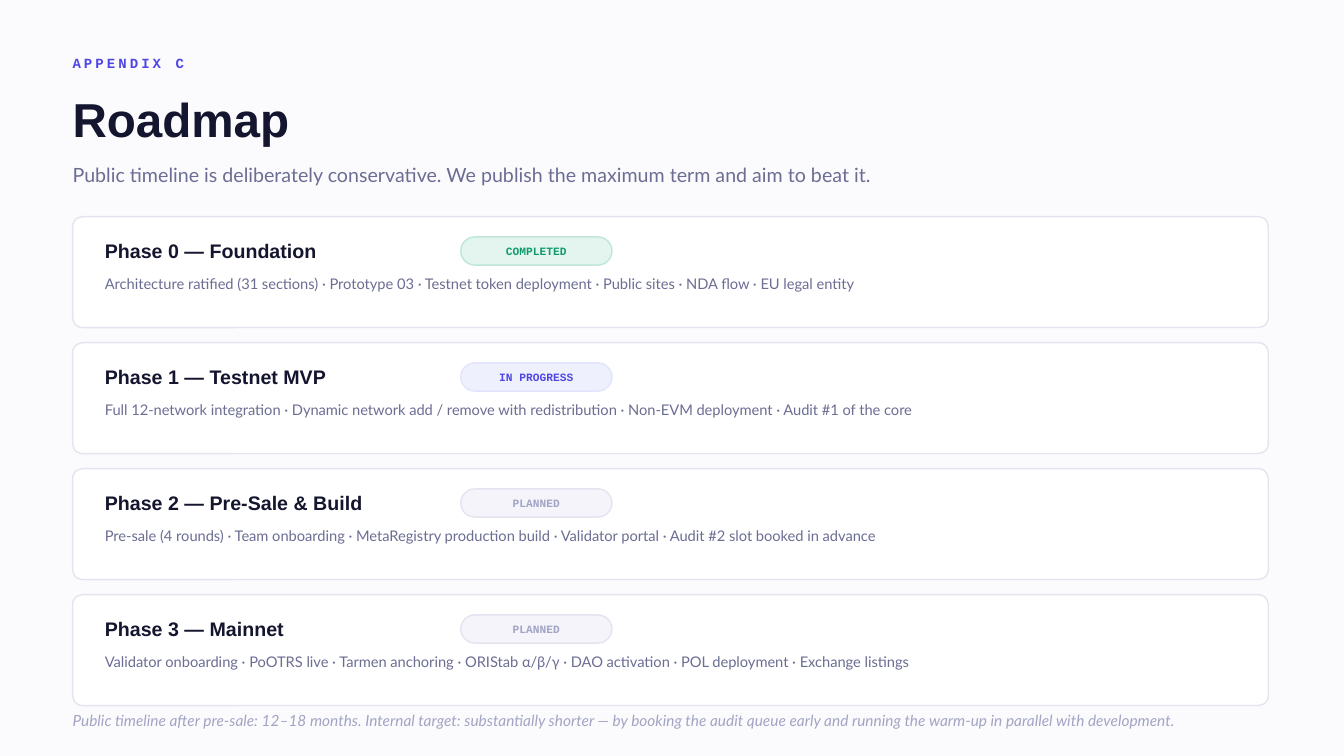
from pptx import Presentation
from pptx import util as u
from pptx.dml.color import RGBColor
from pptx.enum import shapes, text

PX = 9144  # EMU per px, 100 px to the inch
SANS, MONO, BODY = "Arial", "Courier New", "Lato"
INK, SLATE, MUTED, INDIGO = "14152E", "6B6D93", "A2A4C4", "4F46E5"
BORDER = "E4E4F1"

# status: fill, line, text colour
STATUS_COLORS = {
    "COMPLETED": ("E3F5EE", "BFE6D6", "0E9A6C"),
    "IN PROGRESS": ("EEF0FD", "E1E4FB", INDIGO),
    "PLANNED": ("F4F4FA", BORDER, MUTED),
}

PHASES = [
    ("Phase 0 — Foundation", "COMPLETED",
     "Architecture ratified (31 sections) · Prototype 03 · Testnet token deployment"
     " · Public sites · NDA flow · EU legal entity"),
    ("Phase 1 — Testnet MVP", "IN PROGRESS",
     "Full 12-network integration · Dynamic network add / remove with redistribution"
     " · Non-EVM deployment · Audit #1 of the core"),
    ("Phase 2 — Pre-Sale & Build", "PLANNED",
     "Pre-sale (4 rounds) · Team onboarding · MetaRegistry production build"
     " · Validator portal · Audit #2 slot booked in advance"),
    ("Phase 3 — Mainnet", "PLANNED",
     "Validator onboarding · PoOTRS live · Tarmen anchoring · ORIStab α/β/γ"
     " · DAO activation · POL deployment · Exchange listings"),
]


def color(hex_string):
    return RGBColor.from_string(hex_string)


def emu(*lengths):
    return [length * PX for length in lengths]


def write(shape, words, font_name, size, hex_color, bold=False, italic=False,
          align=text.PP_ALIGN.LEFT, anchor=text.MSO_ANCHOR.MIDDLE):
    """Put one formatted line into a shape with no margins; return its run."""
    frame = shape.text_frame
    frame.word_wrap = True
    frame.auto_size = text.MSO_AUTO_SIZE.NONE
    frame.vertical_anchor = anchor
    frame.margin_left = frame.margin_top = frame.margin_right = frame.margin_bottom = 0
    paragraph = frame.paragraphs[0]
    paragraph.alignment = align
    run = paragraph.add_run()
    run.text = words
    font = run.font
    font.name, font.size = font_name, u.Pt(size)
    font.bold, font.italic = bold, italic
    font.color.rgb = color(hex_color)
    return run


def add_label(slide, box, words, *style, **options):
    return write(slide.shapes.add_textbox(*emu(*box)), words, *style, **options)


def add_rounded(slide, box, roundness, fill, line):
    shape = slide.shapes.add_shape(shapes.MSO_SHAPE.ROUNDED_RECTANGLE, *emu(*box))
    shape.adjustments[0] = roundness
    shape.shadow.inherit = False
    shape.fill.solid()
    shape.fill.fore_color.rgb = color(fill)
    shape.line.color.rgb = color(line)
    shape.line.width = u.Pt(1)
    return shape


def add_title(slide, box, words):
    title = slide.shapes.title
    title.left, title.top, title.width, title.height = emu(*box)
    write(title, words, SANS, 34, INK, bold=True)


def add_phase(slide, top, name, status, details):
    add_rounded(slide, (72, top, 1186, 110), 0.09, "FFFFFF", BORDER)
    add_label(slide, (104, top + 18, 340, 32), name, SANS, 14, INK, bold=True)
    fill, line, ink = STATUS_COLORS[status]
    pill = add_rounded(slide, (457, top + 20, 150, 28), 0.5, fill, line)
    write(pill, status, MONO, 8, ink, bold=True, align=text.PP_ALIGN.CENTER)
    add_label(slide, (104, top + 58, 1120, 42), details, BODY, 10.5, SLATE,
              anchor=text.MSO_ANCHOR.TOP)


def main():
    presentation = Presentation()
    presentation.slide_width, presentation.slide_height = emu(1333, 750)
    slide = presentation.slides.add_slide(presentation.slide_layouts[5])
    slide.background.fill.solid()
    slide.background.fill.fore_color.rgb = color("FBFBFD")

    eyebrow = add_label(slide, (72, 50, 800, 24), "APPENDIX C", MONO, 10, INDIGO, bold=True)
    eyebrow.font._element.set("spc", "220")
    add_title(slide, (72, 82, 1190, 72), "Roadmap")
    add_label(slide, (72, 155, 1160, 36),
              "Public timeline is deliberately conservative. "
              "We publish the maximum term and aim to beat it.", BODY, 14, SLATE)
    for index, phase in enumerate(PHASES):
        add_phase(slide, 215 + 125 * index, *phase)
    add_label(slide, (72, 700, 1186, 30),
              "Public timeline after pre-sale: 12–18 months. Internal target: substantially "
              "shorter — by booking the audit queue early and running the warm-up in "
              "parallel with development.", BODY, 11, MUTED, italic=True)
    presentation.save("out.pptx")


if __name__ == "__main__":
    main()
